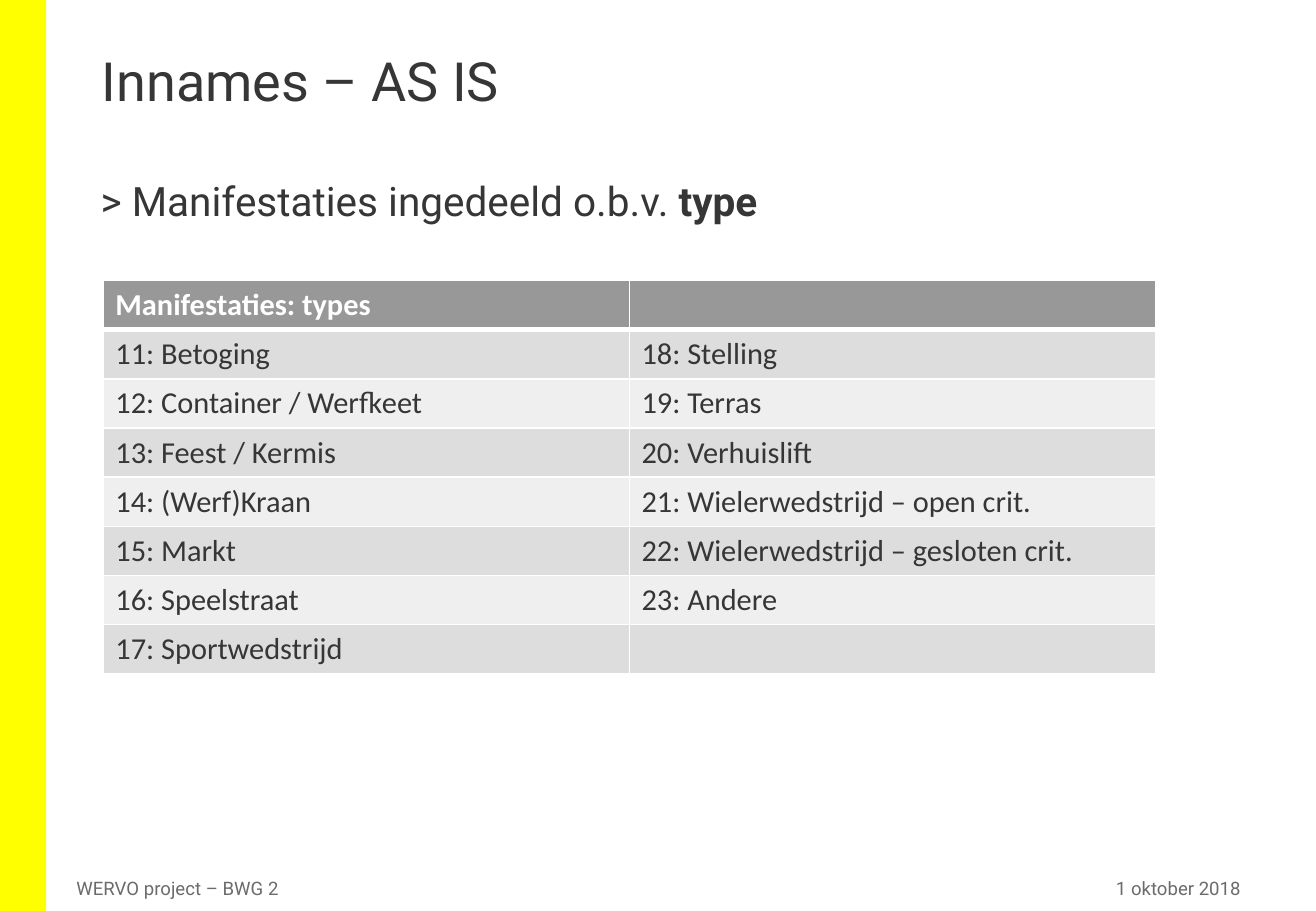
from lxml.etree import SubElement
from pptx import Presentation
from pptx.dml.color import RGBColor
from pptx.enum.shapes import MSO_SHAPE
from pptx.enum.text import MSO_ANCHOR, PP_ALIGN
from pptx.oxml.ns import qn
from pptx.util import Inches, Pt

YELLOW = RGBColor(0xFF, 0xFF, 0x00)
WHITE = RGBColor(0xFF, 0xFF, 0xFF)
DARK = RGBColor(0x37, 0x36, 0x36)
FOOTER_GREY = RGBColor(0x6B, 0x6B, 0x6B)
HEADER_GREY = RGBColor(0x98, 0x98, 0x98)
ODD_GREY = RGBColor(0xDD, 0xDD, 0xDD)
EVEN_GREY = RGBColor(0xEF, 0xEF, 0xEF)

TYPE_ROWS = [
    ("Manifestaties: types", ""),
    ("11: Betoging", "18: Stelling"),
    ("12: Container / Werfkeet", "19: Terras"),
    ("13: Feest / Kermis", "20: Verhuislift"),
    ("14: (Werf)Kraan", "21: Wielerwedstrijd – open crit."),
    ("15: Markt", "22: Wielerwedstrijd – gesloten crit."),
    ("16: Speelstraat", "23: Andere"),
    ("17: Sportwedstrijd", ""),
]


def style_font(font, name, size, color, bold=False):
    font.name = name
    font.size = Pt(size)
    font.color.rgb = color
    font.bold = bold


def add_side_bar(slide):
    shape = slide.shapes.add_shape(
        MSO_SHAPE.RECTANGLE, 0, 0, Inches(0.38), Inches(7.5))
    shape.shadow.inherit = False
    shape.fill.solid()
    shape.fill.fore_color.rgb = YELLOW
    shape.line.fill.background()


def add_text(slide, text, box, size, color=DARK, anchor=MSO_ANCHOR.TOP,
             align=PP_ALIGN.LEFT):
    """Add a one-paragraph text box and return its paragraph."""
    frame = slide.shapes.add_textbox(*map(Inches, box)).text_frame
    frame.word_wrap = True
    frame.vertical_anchor = anchor
    paragraph = frame.paragraphs[0]
    paragraph.text = text
    paragraph.alignment = align
    style_font(paragraph.font, "Roboto", size, color)
    return paragraph


def set_borders(cell, top, bottom):
    """Draw white cell borders; top and bottom are widths in points."""
    properties = cell._tc.get_or_add_tcPr()
    for side, width in (("L", 1), ("R", 1), ("T", top), ("B", bottom)):
        line = SubElement(properties, qn(f"a:ln{side}"), w=str(Pt(width)))
        fill = SubElement(line, qn("a:solidFill"))
        SubElement(fill, qn("a:srgbClr"), val=str(WHITE))


def add_type_table(slide):
    table = slide.shapes.add_table(
        len(TYPE_ROWS), 2, Inches(0.85), Inches(2.31),
        Inches(8.66), Inches(3.24)).table
    table.horz_banding = False
    for row_index, texts in enumerate(TYPE_ROWS):
        header = row_index == 0
        band = ODD_GREY if row_index % 2 else EVEN_GREY
        for column_index, text in enumerate(texts):
            cell = table.cell(row_index, column_index)
            set_borders(cell, top=3 if row_index == 1 else 1,
                        bottom=3 if header else 1)
            cell.fill.solid()
            cell.fill.fore_color.rgb = HEADER_GREY if header else band
            cell.text = text
            style_font(cell.text_frame.paragraphs[0].font, "Calibri", 18,
                       WHITE if header else DARK, bold=header)


def main():
    presentation = Presentation()
    presentation.slide_width = Inches(10.83)
    presentation.slide_height = Inches(7.5)
    slide = presentation.slides.add_slide(presentation.slide_layouts[6])

    add_side_bar(slide)
    title = add_text(slide, "Innames – AS IS", (0.74, 0.4, 9.34, 1.08), 32)
    title.line_spacing = 0.9
    subtitle = add_text(slide, "> Manifestaties ingedeeld o.b.v. ",
                        (0.73, 1.4, 9.34, 0.6), 24)
    keyword = subtitle.add_run()
    keyword.text = "type"
    keyword.font.bold = True
    add_type_table(slide)
    add_text(slide, "WERVO project – BWG 2", (0.53, 7.22, 6.65, 0.19), 11,
             FOOTER_GREY, MSO_ANCHOR.MIDDLE)
    add_text(slide, "1 oktober 2018", (7.18, 7.22, 3.13, 0.19), 11,
             FOOTER_GREY, MSO_ANCHOR.MIDDLE, PP_ALIGN.RIGHT)

    presentation.save("out.pptx")


if __name__ == "__main__":
    main()
